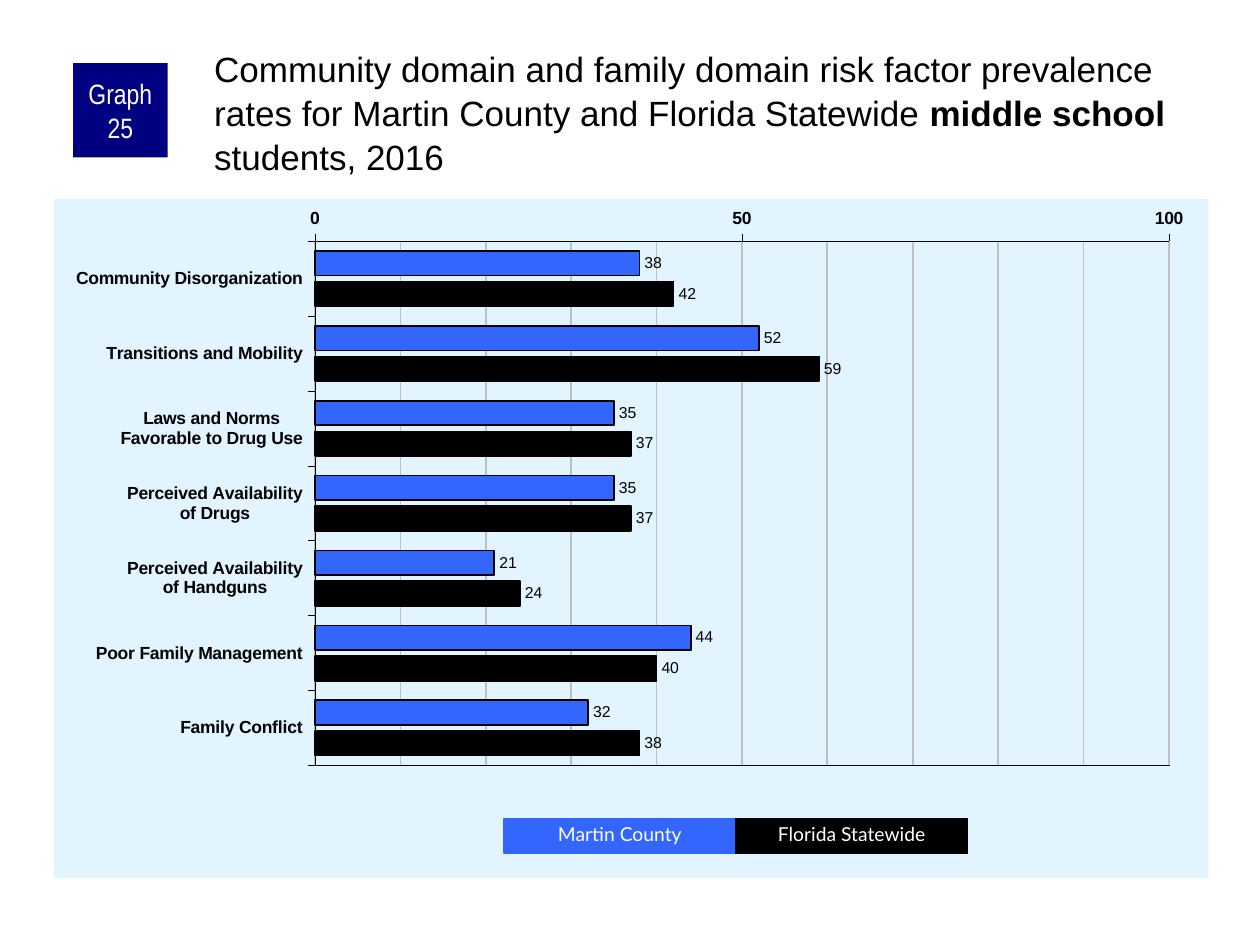
"""Build a slide comparing risk factor prevalence in Martin County and Florida."""
import copy
import pptx
import pptx.chart.data
import pptx.dml.color
import pptx.enum.chart
import pptx.enum.text
import pptx.enum.shapes
import pptx.oxml
import pptx.oxml.ns
import pptx.util

COLORS = {"county": "3366FF", "state": "000000", "badge": "000080", "panel": "E1F4FF",
          "grid": "C0C0C0", "ink": "000000", "light": "FFFFFF"}
HEADLINE = [("Community domain and family domain risk factor prevalence rates "
             "for Martin County and Florida Statewide ", False),
            ("middle school", True), (" students, 2016", False)]
RATES = [("Community Disorganization", 38, 42),
         ("Transitions and Mobility", 52, 59),
         ("Laws and Norms\nFavorable to Drug Use", 35, 37),
         ("Perceived Availability\nof Drugs", 35, 37),
         ("Perceived Availability\nof Handguns", 21, 24),
         ("Poor Family Management", 44, 40),
         ("Family Conflict", 32, 38)]
AREAS = [("Martin County", "county"), ("Florida Statewide", "state")]
KEY_LEFT, KEY_TOP, KEY_WIDTH, KEY_HEIGHT = 4, 6.5, 1.84, 0.27
PLOT_SHARES = {"x": 0.226, "y": 0.062, "w": 0.74, "h": 0.772}


def rgb(name):
    return pptx.dml.color.RGBColor.from_string(COLORS[name])


def inches(*lengths):
    return [pptx.util.Inches(length) for length in lengths]


def style_font(font, size, color="ink", face="Arial", bold=False):
    font.size, font.name, font.bold = pptx.util.Pt(size), face, bold
    font.color.rgb = rgb(color)


def style_line(line, width, color="ink"):
    line.color.rgb, line.width = rgb(color), pptx.util.Pt(width)


def write(frame, text, margins, align="LEFT", anchor="TOP", spacing=None, **font):
    """Fill a text frame with (text, bold) runs or one plain string."""
    frame.word_wrap = True
    frame.vertical_anchor = getattr(pptx.enum.text.MSO_ANCHOR, anchor)
    (frame.margin_left, frame.margin_top,
     frame.margin_right, frame.margin_bottom) = inches(*margins)
    paragraph = frame.paragraphs[0]
    paragraph.alignment = getattr(pptx.enum.text.PP_ALIGN, align)
    paragraph.line_spacing = spacing
    for words, bold in [(text, False)] if isinstance(text, str) else text:
        run = paragraph.add_run()
        run.text = words
        style_font(run.font, bold=bold, **font)


def add_block(slide, bounds, color, outline=None):
    block = slide.shapes.add_shape(pptx.enum.shapes.MSO_SHAPE.RECTANGLE, *inches(*bounds))
    block.shadow.inherit = False
    block.fill.solid()
    block.fill.fore_color.rgb = rgb(color)
    if outline:
        style_line(block.line, outline, color)
    else:
        block.line.fill.background()
    return block


def chart_xml(tag, content):
    return pptx.oxml.parse_xml(
        f'<c:{tag} {pptx.oxml.ns.nsdecls("c", "a")}>{content}</c:{tag}>')


def frame_plot(chart):
    """Set the panel fill, the plot's border and its place in the chart."""
    chart_element = chart._chartSpace.chart
    panel = f'<a:solidFill><a:srgbClr val="{COLORS["panel"]}"/></a:solidFill>'
    chart_element.addnext(chart_xml("spPr", panel + "<a:ln><a:noFill/></a:ln>"))
    plot = chart_element.plotArea
    for layout in plot.findall(pptx.oxml.ns.qn("c:layout")):
        plot.remove(layout)
    modes = '<c:layoutTarget val="inner"/><c:xMode val="edge"/><c:yMode val="edge"/>'
    shares = "".join(f'<c:{side} val="{share}"/>' for side, share in PLOT_SHARES.items())
    plot.insert(0, chart_xml("layout", f"<c:manualLayout>{modes}{shares}</c:manualLayout>"))
    border = f'<a:solidFill><a:srgbClr val="{COLORS["ink"]}"/></a:solidFill>'
    plot.append(chart_xml("spPr", f'<a:noFill/><a:ln w="3175">{border}</a:ln>'))


def add_gridlines(axis):
    """Give an axis major and minor gridlines of one style."""
    axis.has_major_gridlines = axis.has_minor_gridlines = True
    style_line(axis.major_gridlines.format.line, 1, "grid")
    major, minor = [axis._element.find(pptx.oxml.ns.qn(f"c:{rank}Gridlines"))
                    for rank in ("major", "minor")]
    minor.append(copy.deepcopy(major[0]))


def add_rates(slide):
    kinds = pptx.enum.chart
    names, *columns = zip(*RATES)
    rates = pptx.chart.data.CategoryChartData()
    rates.categories = names
    for (area, _), values in zip(AREAS, columns):
        rates.add_series(area, values)
    chart = slide.shapes.add_chart(kinds.XL_CHART_TYPE.BAR_CLUSTERED,
                                   *inches(0.43, 1.58, 9.16, 5.39), rates).chart
    chart.has_title = chart.has_legend = False
    style_font(chart.font, 11.8)
    plot = chart.plots[0]
    plot.gap_width, plot.overlap, plot.vary_by_categories = 80, -25, False
    for series, (_, color) in zip(plot.series, AREAS):
        series.format.fill.solid()
        series.format.fill.fore_color.rgb = rgb(color)
        style_line(series.format.line, 1)
        labels = series.data_labels
        labels.show_value = True
        labels.position = kinds.XL_LABEL_POSITION.OUTSIDE_END
        style_font(labels.font, 9)
    factors, percent = chart.category_axis, chart.value_axis
    for axis in (factors, percent):
        axis.major_tick_mark = kinds.XL_TICK_MARK.OUTSIDE
        axis.minor_tick_mark = kinds.XL_TICK_MARK.NONE
        style_font(axis.tick_labels.font, 10, bold=True)
        style_line(axis.format.line, 0.25)
    factors.reverse_order = True
    factors.crosses = kinds.XL_AXIS_CROSSES.MAXIMUM
    percent.minimum_scale, percent.maximum_scale = 0, 100
    percent.major_unit, percent.minor_unit = 50, 10
    add_gridlines(percent)
    frame_plot(chart)


def main():
    deck = pptx.Presentation()
    deck.slide_width, deck.slide_height = inches(10, 7.5)
    slide = deck.slides.add_slide(deck.slide_layouts[5])
    add_rates(slide)
    badge = add_block(slide, (0.58, 0.5, 0.75, 0.75), "badge")
    write(badge.text_frame, "Graph 25", (0.05, 0, 0.05, 0), align="CENTER",
          anchor="MIDDLE", size=16, color="light", face="Arial Narrow")
    title = slide.shapes.title
    title.left, title.top, title.width, title.height = inches(1.67, 0.33, 7.92, 0.83)
    title.text_frame.auto_size = pptx.enum.text.MSO_AUTO_SIZE.NONE
    write(title.text_frame, HEADLINE, (0.03, 0.03, 0, 0), spacing=1.05, size=20)
    for column, (area, color) in enumerate(AREAS):
        bounds = (KEY_LEFT + column * KEY_WIDTH, KEY_TOP, KEY_WIDTH, KEY_HEIGHT)
        key = add_block(slide, bounds, color, outline=0.75)
        write(key.text_frame, area, (0.1, 0.05, 0.1, 0.05), align="CENTER",
              spacing=0.9, size=11, color="light", face="Lato")
        key.text_frame.auto_size = pptx.enum.text.MSO_AUTO_SIZE.SHAPE_TO_FIT_TEXT
    deck.save("out.pptx")


if __name__ == "__main__":
    main()
